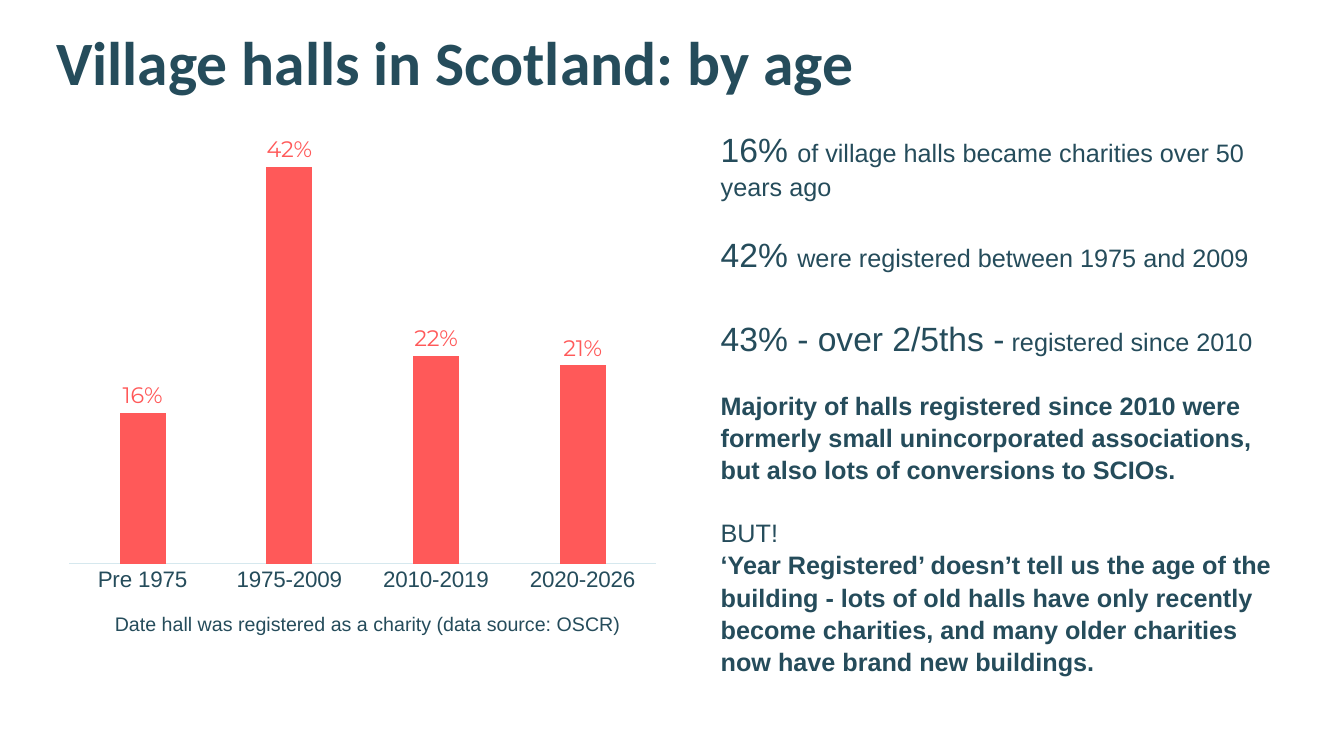
from lxml import etree
from pptx import Presentation
from pptx import util as u
from pptx.chart.data import CategoryChartData
from pptx.dml.color import RGBColor
from pptx.enum import chart as ch
from pptx.oxml import parse_xml
from pptx.oxml.ns import nsdecls

COLORS = {"ink": "254C5B", "bar": "FF5959", "axis": "D6E8EE"}


def style_font(font, size, name="Arial", color="ink", bold=False):
    font.size, font.name, font.bold = u.Pt(size), name, bold
    font.color.rgb = RGBColor.from_string(COLORS[color])


def add_run(p, text, **fmt):
    r = p.add_run()
    r.text = text
    style_font(r.font, **fmt)


class SlideBuilder:
    def __init__(self, slide, line_spacing=1.07):
        self.slide = slide
        self.line_spacing = line_spacing

    def text(self, box, paragraphs, line_spacing=None, inset_top=0.05):
        """Each paragraph is (space before in points, [(text, format), ...])."""
        tf = self.slide.shapes.add_textbox(*map(u.Inches, box)).text_frame
        tf.word_wrap = True
        tf.margin_top = u.Inches(inset_top)
        for i, (gap, runs) in enumerate(paragraphs):
            p = tf.paragraphs[0] if i == 0 else tf.add_paragraph()
            p.space_before = u.Pt(gap)
            p.line_spacing = line_spacing or self.line_spacing
            for content, fmt in runs:
                add_run(p, content, **fmt)

    def column_chart(self, box, categories, values, layout):
        data = CategoryChartData(number_format="0%")
        data.categories = categories
        data.add_series("Series 1", values)
        chart = self.slide.shapes.add_chart(
            ch.XL_CHART_TYPE.COLUMN_CLUSTERED, *map(u.Inches, box), data).chart
        chart.has_legend = chart.has_title = False
        style_font(chart.font, 10, "Calibri")

        # Axes
        cat = chart.category_axis
        cat.major_tick_mark = ch.XL_TICK_MARK.NONE
        cat.format.line.color.rgb = RGBColor.from_string(COLORS["axis"])
        cat.format.line.width = u.Pt(0.75)
        style_font(cat.tick_labels.font, 16)
        val = chart.value_axis
        val.visible = val.has_major_gridlines = False
        val.minimum_scale, val.maximum_scale = 0, 0.45

        # Bars and labels
        plot = chart.plots[0]
        plot.gap_width, plot.overlap = 219, -27
        plot.vary_by_categories = False
        fill = plot.series[0].format.fill
        fill.solid()
        fill.fore_color.rgb = RGBColor.from_string(COLORS["bar"])
        plot.has_data_labels = True
        labels = plot.data_labels
        labels.show_value = True
        labels.number_format, labels.number_format_is_linked = "0%", False
        labels.position = ch.XL_LABEL_POSITION.OUTSIDE_END
        style_font(labels.font, 16, "Montserrat", "bar")

        # Inner plot area
        area = chart._chartSpace.chart.plotArea
        for old in area.findall("{*}layout"):
            area.remove(old)
        node = parse_xml(f"<c:layout {nsdecls('c')}><c:manualLayout/></c:layout>")
        settings = [("layoutTarget", "inner"), ("xMode", "edge"), ("yMode", "edge"),
                    *zip("xywh", layout)]
        for tag, value in settings:
            name = etree.QName(node).namespace
            etree.SubElement(node[0], f"{{{name}}}{tag}").set("val", str(value))
        area.insert(0, node)


def main():
    prs = Presentation()
    prs.slide_width, prs.slide_height = u.Inches(13.33), u.Inches(7.5)
    s = SlideBuilder(prs.slides.add_slide(prs.slide_layouts[6]))

    # Title
    s.text((0.46, 0.24, 10.98, 0.88),
           [(0, [("Village halls in Scotland: by age",
                  dict(size=44, name="Calibri", bold=True))])],
           line_spacing=0.9, inset_top=0.08)

    # Chart and caption
    s.column_chart((0.54, 1.2, 6.12, 5.83),
                   ["Pre 1975", "1975-2009", "2010-2019", "2020-2026"],
                   [0.16, 0.42, 0.22, 0.21], (0.024, 0.03, 0.951, 0.724))
    s.text((1.04, 6.02, 5.29, 0.28),
           [(0, [("Date hall was registered as a charity (data source: OSCR)",
                  dict(size=14))])], line_spacing=1.0)

    # Findings
    big, body, strong = dict(size=24), dict(size=18), dict(size=18, bold=True)
    gap, wide_gap = 21.5, 28.7
    s.text((7.05, 1.2, 5.86, 5.35), [
        (0, [("16% ", big),
             ("of village halls became charities over 50 years ago", body)]),
        (gap, [("42% ", big), ("were registered between 1975 and 2009", body)]),
        (wide_gap, [("43% - over 2/5ths -", big), (" registered since 2010", body)]),
        (gap, [("Majority of halls registered since 2010 were formerly small "
                "unincorporated associations, but also lots of conversions to SCIOs.",
                strong)]),
        (gap, [("BUT!", body)]),
        (0, [("‘Year Registered’ doesn’t tell us the age of the building - lots of "
              "old halls have only recently become charities, and many older "
              "charities now have brand new buildings.", strong)]),
    ])
    prs.save("out.pptx")


if __name__ == "__main__":
    main()
